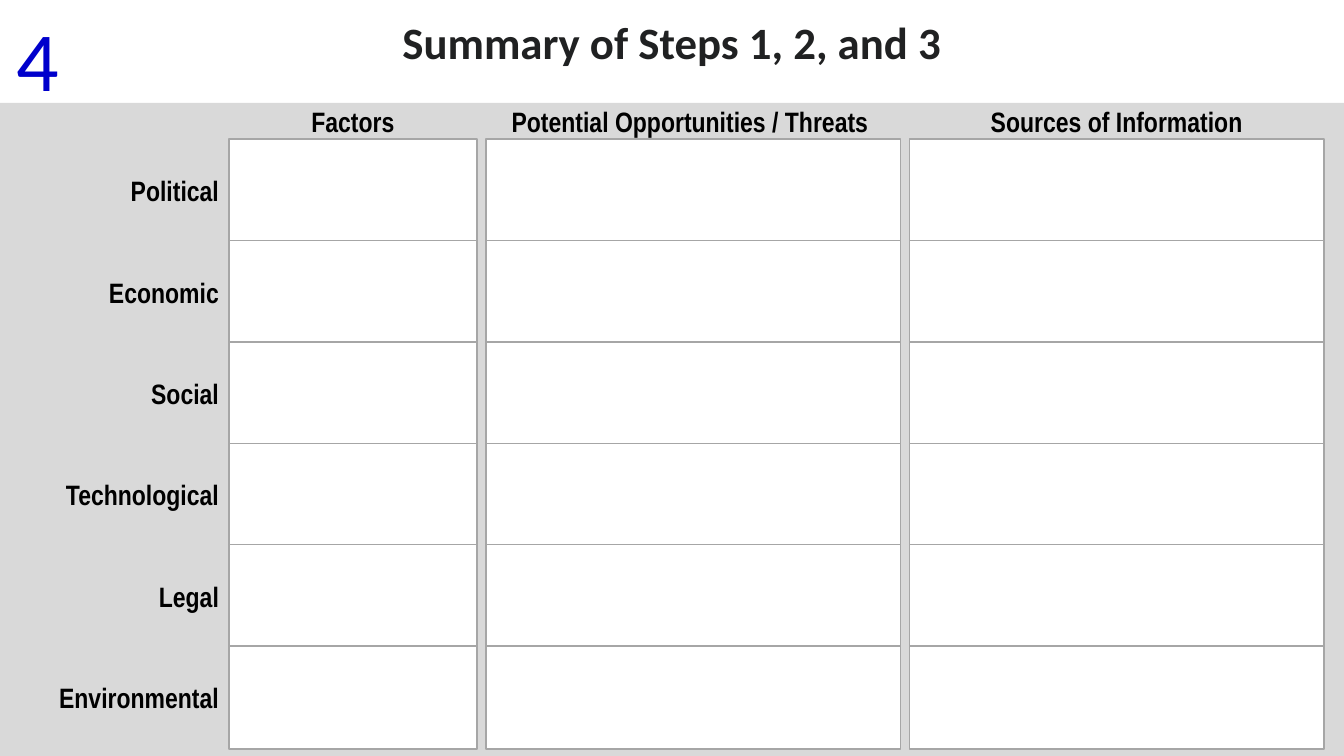
from pptx import Presentation
from pptx.dml.color import RGBColor
from pptx.enum.shapes import MSO_SHAPE
from pptx.enum.text import MSO_ANCHOR, MSO_AUTO_SIZE, PP_ALIGN
from pptx.util import Inches, Pt

WHITE = RGBColor(0xFF, 0xFF, 0xFF)
BLACK = RGBColor(0x00, 0x00, 0x00)
DARK = RGBColor(0x20, 0x21, 0x22)
BLUE = RGBColor(0x00, 0x00, 0xCC)
PALE = RGBColor(0xD9, 0xD9, 0xD9)
GRAY = RGBColor(0xA6, 0xA6, 0xA6)

COLUMNS = [
    ("Factors", 2.27, 2.46),
    ("Potential Opportunities / Threats ", 4.82, 4.11),
    ("Sources of Information", 9.02, 4.11),
]
ROWS = ["Political", "Economic", "Social", "Technological", "Legal", "Environmental"]
TOP = 1.38
LAST = 6.41
CELL = 1.02
LABEL = 0.44
STEP = (LAST - TOP) / (len(ROWS) - 1)


def add_text(shapes, text, left, top, width, height, size=20, font="Arial Narrow",
             color=BLACK, bold=True, align=PP_ALIGN.CENTER,
             anchor=MSO_ANCHOR.MIDDLE, wrap=True):
    box = shapes.add_textbox(Inches(left), Inches(top), Inches(width), Inches(height))
    frame = box.text_frame
    frame.word_wrap = wrap
    frame.auto_size = MSO_AUTO_SIZE.SHAPE_TO_FIT_TEXT
    frame.vertical_anchor = anchor
    para = frame.paragraphs[0]
    para.alignment = align
    run = para.add_run()
    run.text = text
    run.font.size = Pt(size)
    run.font.name = font
    run.font.bold = bold
    run.font.color.rgb = color


def add_box(shapes, kind, left, top, width, height, fill, line=None):
    box = shapes.add_shape(kind, Inches(left), Inches(top), Inches(width), Inches(height))
    box.shadow.inherit = False
    box.fill.solid()
    box.fill.fore_color.rgb = fill
    if line is None:
        box.line.fill.background()
    else:
        box.line.color.rgb = line
        box.line.width = Pt(1)
    return box


def add_row(slide, name, top):
    shapes = slide.shapes.add_group_shape().shapes
    for _, left, width in COLUMNS:
        cell = add_box(shapes, MSO_SHAPE.ROUNDED_RECTANGLE, left, top, width, CELL,
                       WHITE, line=GRAY)
        cell.adjustments[0] = 0
    add_text(shapes, name, 0.2, top + (CELL - LABEL) / 2, 2.07, LABEL,
             align=PP_ALIGN.RIGHT)


def main():
    deck = Presentation()
    deck.slide_width = Inches(13.33)
    deck.slide_height = Inches(7.5)
    slide = deck.slides.add_slide(deck.slide_layouts[6])
    shapes = slide.shapes
    add_text(shapes, "Summary of Steps 1, 2, and 3", 0.45, 0.1, 12.43, 0.64,
             size=32, font="Calibri", color=DARK, anchor=MSO_ANCHOR.TOP)
    add_text(shapes, "4", 0.06, 0.03, 0.63, 1.11, size=60, font="Calibri",
             color=BLUE, bold=False, anchor=MSO_ANCHOR.TOP, wrap=False)
    add_box(shapes, MSO_SHAPE.RECTANGLE, 0, 1.02, 13.33, 6.48, PALE)
    for head, left, width in COLUMNS:
        add_text(shapes, head, left, 0.98, width, LABEL)
    for i, name in enumerate(ROWS):
        add_row(slide, name, TOP + i * STEP)
    deck.save("out.pptx")


if __name__ == "__main__":
    main()
